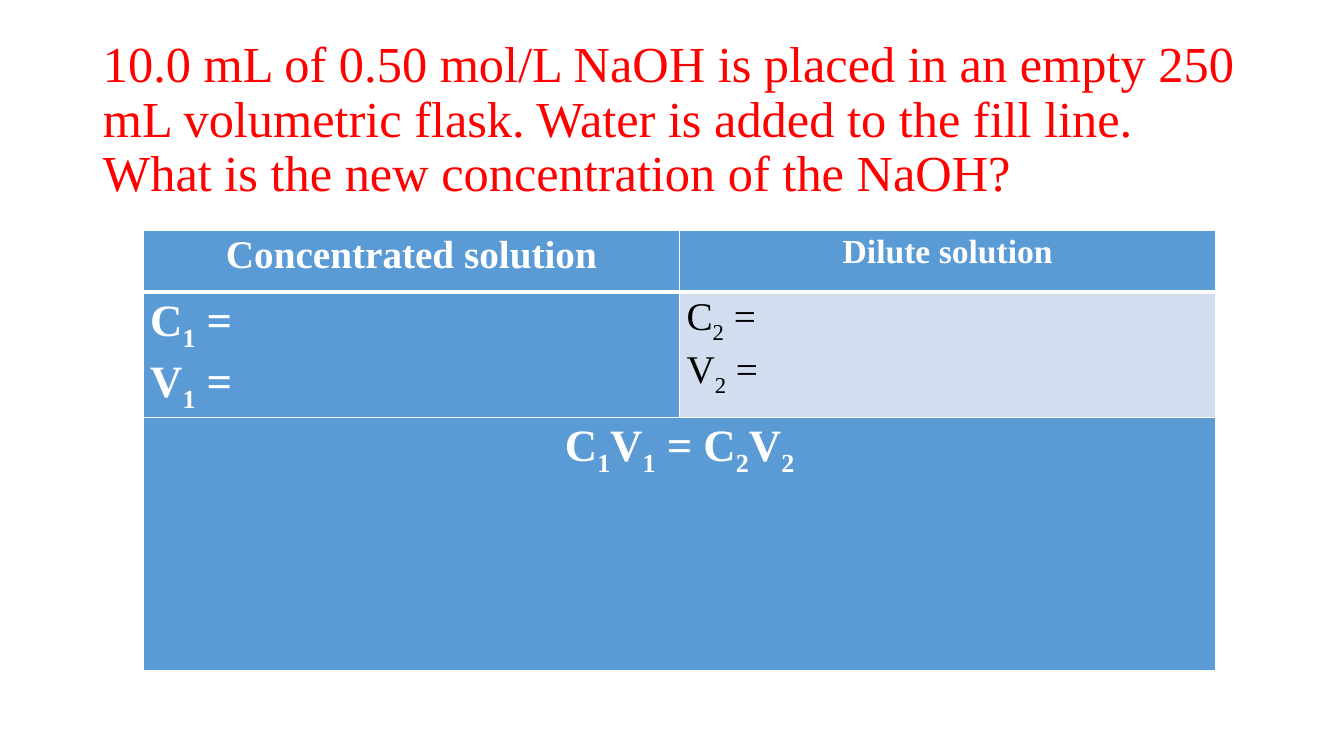
import itertools
import lxml.etree
import pptx
import pptx.dml.color
import pptx.enum.text
import pptx.oxml.ns
import pptx.util

BLUE, PALE, WHITE, BLACK, RED = "5B9BD5", "D2DEEF", "FFFFFF", "000000", "FF0000"
LEFT = pptx.enum.text.PP_ALIGN.LEFT
CENTER = pptx.enum.text.PP_ALIGN.CENTER
inches = pptx.util.Inches


def color(hex_string):
    return pptx.dml.color.RGBColor.from_string(hex_string)


def add_run(paragraph, text, size, hex_string, bold):
    run = paragraph.add_run()
    run.text = text
    run.font.name = "Times New Roman"
    run.font.size = pptx.util.Pt(size)
    run.font.bold = bold
    run.font.color.rgb = color(hex_string)
    return run


presentation = pptx.Presentation()
presentation.slide_width = inches(13.33)
presentation.slide_height = inches(7.5)
slide = presentation.slides.add_slide(presentation.slide_layouts[5])

title = slide.shapes.title
title.left, title.top, title.width, title.height = map(inches, (0.92, 0.4, 11.5, 1.6))
title.text_frame.word_wrap = True
title.text_frame.auto_size = pptx.enum.text.MSO_AUTO_SIZE.NONE
title.text_frame.vertical_anchor = pptx.enum.text.MSO_ANCHOR.MIDDLE
question = title.text_frame.paragraphs[0]
question.alignment = LEFT
question.line_spacing = 0.9
add_run(
    question,
    "10.0 mL of 0.50 mol/L NaOH is placed in an empty 250 mL volumetric flask. "
    "Water is added to the fill line. What is the new concentration of the NaOH?",
    36, RED, False,
)

row_heights = [0.61, 1.24, 2.51]
column_width = 5.32
table = slide.shapes.add_table(
    len(row_heights), 2, inches(1.42), inches(2.29),
    inches(2 * column_width), inches(sum(row_heights)),
).table
for column in table.columns:
    column.width = inches(column_width)
for row, height in zip(table.rows, row_heights):
    row.height = inches(height)
table.cell(2, 0).merge(table.cell(2, 1))

cells = [
    (0, 0, ["Concentrated solution"], 28, WHITE, True, CENTER, BLUE),
    (0, 1, ["Dilute solution"], 24, WHITE, True, CENTER, BLUE),
    (1, 0, ["C1 =", "V1 ="], 32, WHITE, True, LEFT, BLUE),
    (1, 1, ["C2 =", "V2 ="], 28, BLACK, False, LEFT, PALE),
    (2, 0, ["C1V1 = C2V2"], 32, WHITE, True, CENTER, BLUE),
    (2, 1, [], 32, WHITE, True, CENTER, BLUE),
]
for row, column, lines, size, text_color, bold, alignment, fill in cells:
    cell = table.cell(row, column)
    cell.margin_left = cell.margin_right = inches(0.07)
    cell.margin_top = cell.margin_bottom = 0

    properties = cell._tc.get_or_add_tcPr()
    for side in "LRTB":
        heavy = (row, side) in [(0, "B"), (1, "T")]
        border = lxml.etree.SubElement(
            properties, pptx.oxml.ns.qn(f"a:ln{side}"), w=str(pptx.util.Pt(3 if heavy else 1))
        )
        solid = lxml.etree.SubElement(border, pptx.oxml.ns.qn("a:solidFill"))
        lxml.etree.SubElement(solid, pptx.oxml.ns.qn("a:srgbClr"), val=WHITE)
    cell.fill.solid()
    cell.fill.fore_color.rgb = color(fill)

    for index, line in enumerate(lines):
        frame = cell.text_frame
        paragraph = frame.add_paragraph() if index else frame.paragraphs[0]
        paragraph.alignment = alignment
        paragraph.line_spacing = 1.07
        for is_subscript, characters in itertools.groupby(line, str.isdigit):
            run = add_run(paragraph, "".join(characters), size, text_color, bold)
            if is_subscript:
                run.font._element.set("baseline", "-25000")

presentation.save("out.pptx")
